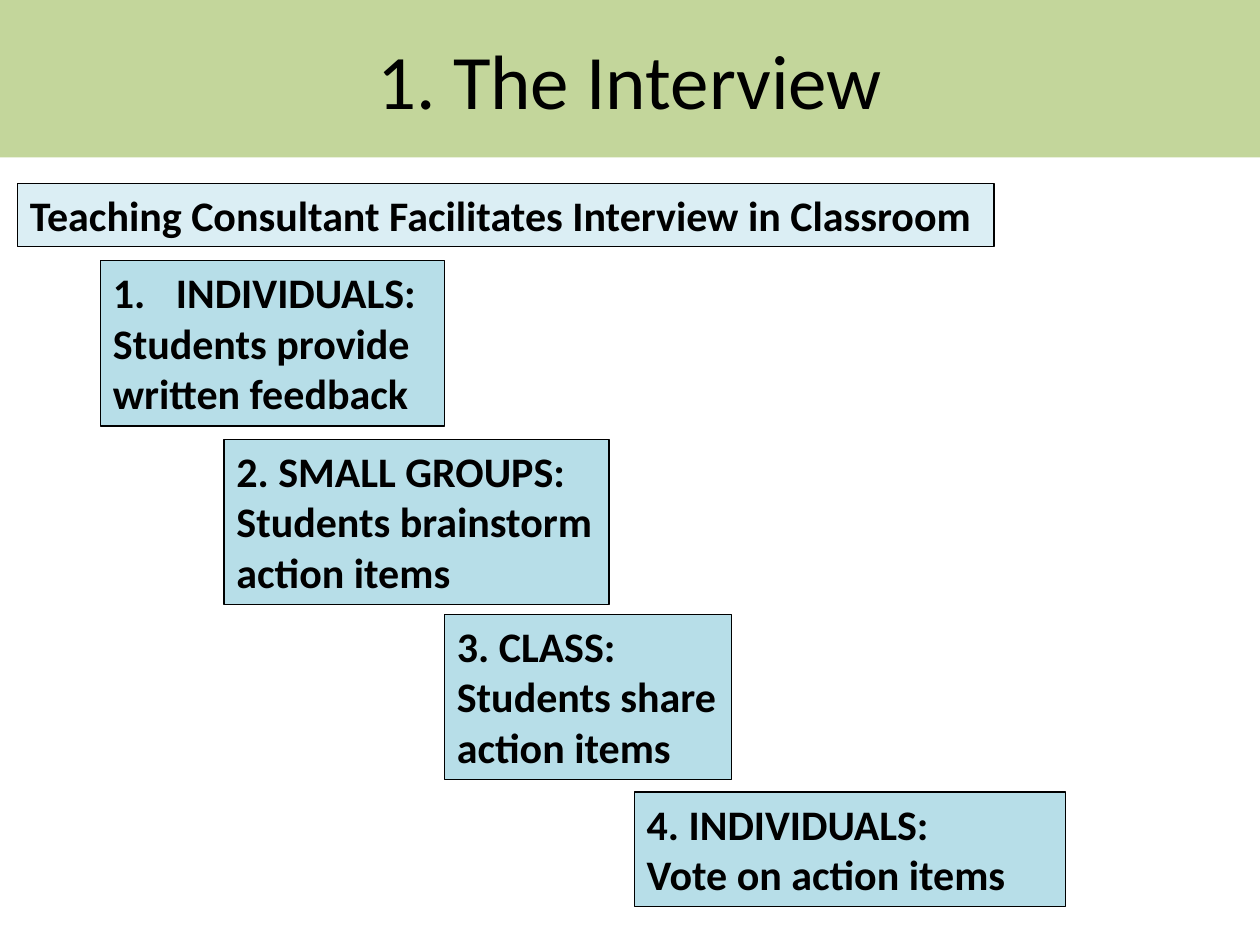
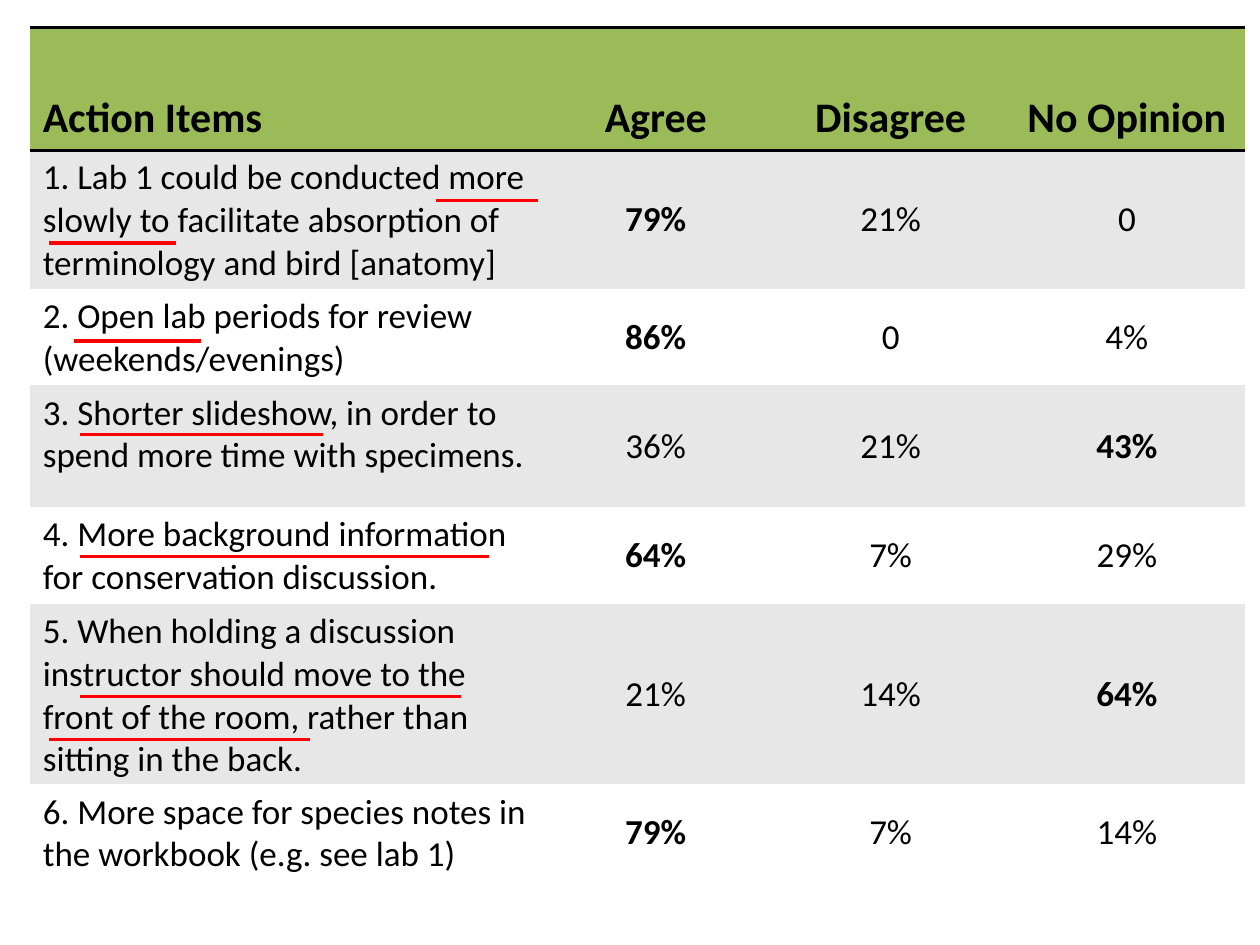
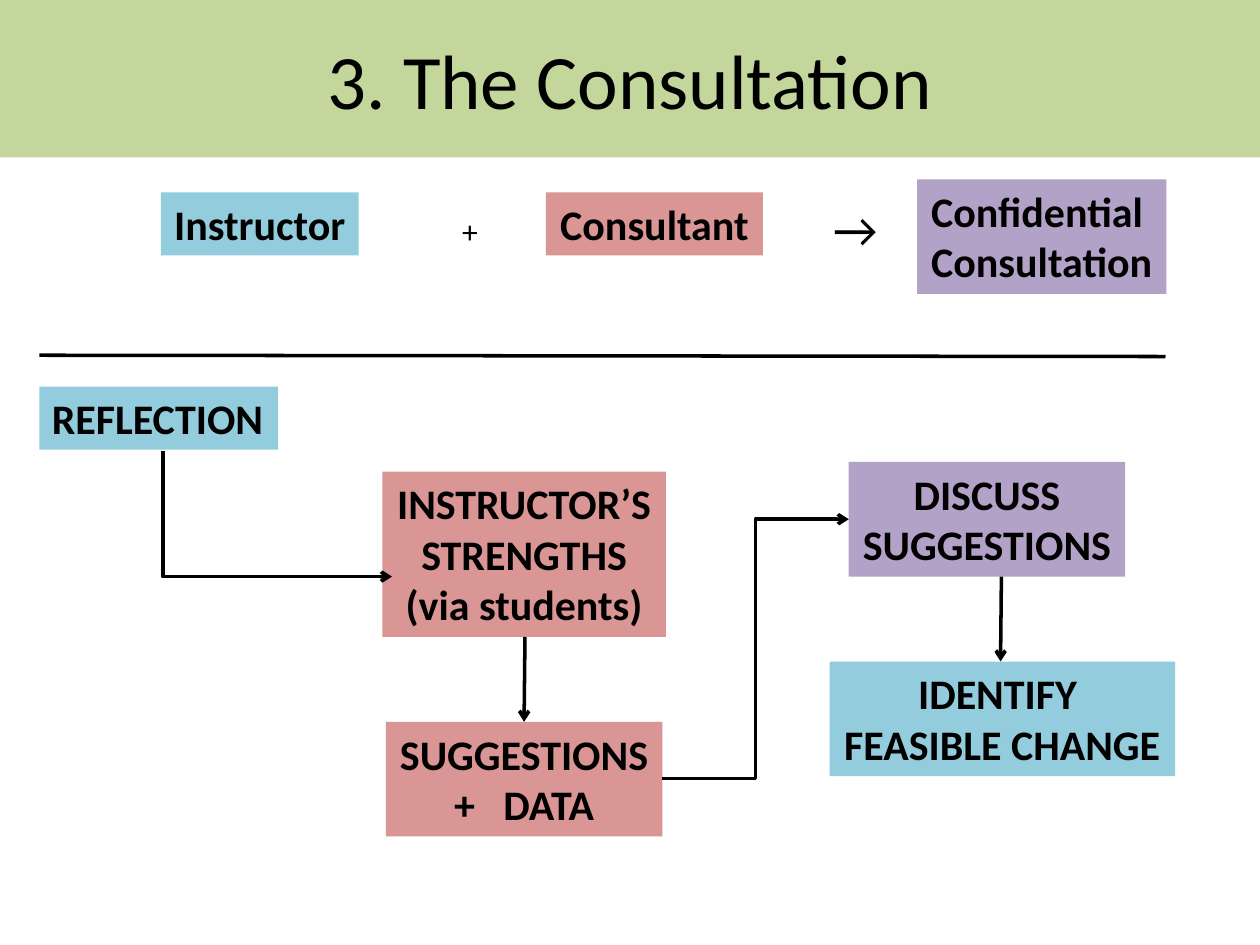
"""Build three slides on classroom interviews, student votes and the consultation."""
from lxml import etree
from pptx import Presentation
from pptx import util as u
from pptx.dml.color import RGBColor
from pptx.enum import shapes, text
from pptx.oxml import ns

COLOURS = {
    "ink": "000000", "band": "C3D69B", "header": "9BBB59", "stripe": "E7E7E7",
    "white": "FFFFFF", "mark": "FF0000", "pale": "DBEEF4", "step": "B7DEE8",
    "instructor": "93CDDD", "consultant": "D99694", "shared": "B3A2C7",
}
FONT = "Calibri"
PLAIN_TABLE = "{2D5ABB26-0587-4C30-8999-92F81FD0307C}"
LEFT, CENTRE = text.PP_ALIGN.LEFT, text.PP_ALIGN.CENTER
MIDDLE, BOTTOM = text.MSO_ANCHOR.MIDDLE, text.MSO_ANCHOR.BOTTOM


def colour(name):
    return RGBColor.from_string(COLOURS[name])


def child(parent, tag, **attributes):
    return etree.SubElement(parent, ns.qn(tag), attributes)


class Deck:
    def __init__(self):
        self.deck = Presentation()
        self.deck.slide_width, self.deck.slide_height = u.Pt(720), u.Pt(540)
        self.page = None

    def new_page(self, title=None):
        self.page = self.deck.slides.add_slide(self.deck.slide_layouts[6])
        if title:
            band = self.box((0, 0, 720, 90), [title], "band", size=44, bold=False,
                            align=CENTRE, wrap=True, grow=False)
            band.text_frame.vertical_anchor = MIDDLE

    def span(self, para, words, size, bold):
        span = para.add_run()
        span.text = words
        span.font.name, span.font.size, span.font.bold = FONT, u.Pt(size), bold
        span.font.color.rgb = colour("ink")
        return span

    def box(self, place, lines, fill=None, outline=False, size=24, bold=True,
            align=LEFT, wrap=False, grow=True):
        box = self.page.shapes.add_textbox(*map(u.Pt, place))
        if fill:
            box.fill.solid()
            box.fill.fore_color.rgb = colour(fill)
        if outline:
            box.line.color.rgb = colour("ink")
            box.line.width = u.Pt(0.75)
        frame = box.text_frame
        frame.word_wrap = wrap
        if grow:
            frame.auto_size = text.MSO_AUTO_SIZE.SHAPE_TO_FIT_TEXT
        for index, line in enumerate(lines):
            para = frame.paragraphs[0] if index == 0 else frame.add_paragraph()
            para.alignment = align
            if line:
                self.span(para, line, size, bold)
        return box

    def number(self, para, indent):
        properties = para._p.get_or_add_pPr()
        properties.set("marL", str(u.Pt(indent)))
        properties.set("indent", str(-u.Pt(indent)))
        child(properties, "a:buFont", typeface="+mj-lt")
        child(properties, "a:buAutoNum", type="arabicPeriod")

    def line(self, start, end, ink="ink", arrow=False, bend=None):
        kind = shapes.MSO_CONNECTOR.STRAIGHT if bend is None else shapes.MSO_CONNECTOR.ELBOW
        line = self.page.shapes.add_connector(kind, *map(u.Pt, (*start, *end)))
        line.line.color.rgb = colour(ink)
        line.line.width = u.Pt(2)
        properties = line._element.spPr
        if arrow:
            child(properties.find(ns.qn("a:ln")), "a:tailEnd", type="arrow")
        if bend is not None:
            guides = properties.find(ns.qn("a:prstGeom")).get_or_add_avLst()
            child(guides, "a:gd", name="adj1", fmla=f"val {round(bend * 100000)}")
        child(properties, "a:effectLst")

    def cell(self, cell, words, fill, size, bold, align, anchor):
        cell.fill.solid()
        cell.fill.fore_color.rgb = colour(fill)
        cell.vertical_anchor = anchor
        para = cell.text_frame.paragraphs[0]
        para.alignment = align
        self.span(para, words, size, bold)

    def rule_cell(self, cell):
        for index, tag in enumerate(("a:lnT", "a:lnB")):
            properties = cell._tc.get_or_add_tcPr()
            edge = child(properties, tag, w=str(u.Pt(2)))
            child(child(edge, "a:solidFill"), "a:srgbClr", val=COLOURS["ink"])
            properties.insert(index, edge)

    def table(self, corner, widths, heights, header, rows):
        frame = self.page.shapes.add_table(
            len(heights), len(widths),
            *map(u.Pt, (*corner, sum(widths), sum(heights))))
        table = frame.table
        table._tbl.tblPr.find(ns.qn("a:tableStyleId")).text = PLAIN_TABLE
        table.first_row = table.horz_banding = False
        for column, width in zip(table.columns, widths):
            column.width = u.Pt(width)
        for row, height in zip(table.rows, heights):
            row.height = u.Pt(height)
        for index, words in enumerate(header):
            cell = table.cell(0, index)
            self.cell(cell, words, "header", 24, True, CENTRE if index else LEFT, BOTTOM)
            self.rule_cell(cell)
        for number, (item, *votes) in enumerate(rows, 1):
            fill = "stripe" if number % 2 else "white"
            self.cell(table.cell(number, 0), item, fill, 20, False, LEFT, text.MSO_ANCHOR.TOP)
            top = max(votes)
            for index, vote in enumerate(votes, 1):
                words = f"{vote}%" if vote else "0"
                self.cell(table.cell(number, index), words, fill, 20, vote == top, CENTRE, MIDDLE)


def interview(deck):
    deck.new_page("1. The Interview")
    deck.box((10, 105, 558, 36), ["Teaching Consultant Facilitates Interview in Classroom"],
             "pale", outline=True)
    steps = [
        ((57.5, 149, 196.5, 94.5), True,
         ["INDIVIDUALS:", "Students provide", "written feedback"]),
        ((128, 251, 220, 94.5), False,
         ["2. SMALL GROUPS:", "Students brainstorm", "action items"]),
        ((254, 351, 164, 94.5), False, ["3. CLASS:", "Students share", "action items"]),
        ((362.5, 452.5, 246.5, 65.5), True, ["4. INDIVIDUALS:", "Vote on action items"]),
    ]
    boxes = [deck.box(place, lines, "step", outline=True, wrap=wrap)
             for place, wrap, lines in steps]
    deck.number(boxes[0].text_frame.paragraphs[0], 36)


def action_items(deck):
    deck.new_page()
    deck.table(
        (17.25, 15.75), (291, 133, 135.5, 134.5), (70, 70, 40, 69.5, 40, 51, 51),
        ("Action Items", "Agree", "Disagree", "No Opinion"),
        [
            ("1. Lab 1 could be conducted more slowly to facilitate absorption of "
             "terminology and bird [anatomy]", 79, 21, 0),
            ("2. Open lab periods for review (weekends/evenings)", 86, 0, 4),
            ("3. Shorter slideshow, in order to spend more time with specimens.", 36, 21, 43),
            ("4. More background information for conservation discussion.", 64, 7, 29),
            ("5. When holding a discussion instructor should move to the front of the "
             "room, rather than sitting in the back.", 21, 14, 64),
            ("6. More space for species notes in the workbook (e.g. see lab 1)", 79, 7, 14),
        ])
    underlines = [(249, 307.5, 114.5), (28, 100.5, 138.75), (42.5, 115, 195),
                  (46, 184.5, 248.25), (46, 279.5, 318), (46, 263.5, 398), (28, 177, 422.5)]
    for left, right, height in underlines:
        deck.line((left, height), (right, height), "mark")


def consultation(deck):
    deck.new_page("3. The Consultation")
    deck.box((22.5, 221, 136.5, 36), ["REFLECTION"], "instructor")
    deck.box((257, 117.5, 24, 29), ["+"], size=18, bold=False)
    deck.box((469, 110, 54.5, 41), ["→"], size=28, bold=False, wrap=True)
    roles = [
        ((92, 110, 113, 36), "instructor", ["Instructor"]),
        ((312, 110, 124, 36), "consultant", ["Consultant"]),
        ((524, 102.5, 142.5, 65.5), "shared", ["Confidential ", "Consultation"]),
        ((218.5, 269.5, 162, 94.5), "consultant",
         ["INSTRUCTOR’S ", "STRENGTHS", "(via students)"]),
        ((485, 264, 158, 65.5), "shared", ["DISCUSS", "SUGGESTIONS"]),
        ((474, 378, 197.5, 65.5), "instructor", ["IDENTIFY ", "FEASIBLE CHANGE"]),
    ]
    for place, fill, lines in roles:
        deck.box(place, lines, fill, align=CENTRE)
    data = deck.box((220.5, 412.5, 158, 65.5), ["SUGGESTIONS", ""], "consultant", align=CENTRE)
    para = data.text_frame.paragraphs[1]
    for words, spacing in (("+", 0), (" ", 1080), ("DATA", 0)):
        span = deck.span(para, words, 24, True)
        if spacing:
            span._r.get_or_add_rPr().set("spc", str(spacing))
    deck.line((22.5, 203), (666, 203.75))
    deck.line((93, 257.5), (224, 329.5), arrow=True, bend=0)
    deck.line((300, 364), (299.5, 412.5), arrow=True)
    deck.line((378.5, 445), (485, 296.75), arrow=True, bend=0.5)
    deck.line((572.25, 329.5), (571.75, 378), arrow=True)


def main():
    deck = Deck()
    interview(deck)
    action_items(deck)
    consultation(deck)
    deck.deck.save("out.pptx")


if __name__ == "__main__":
    main()
